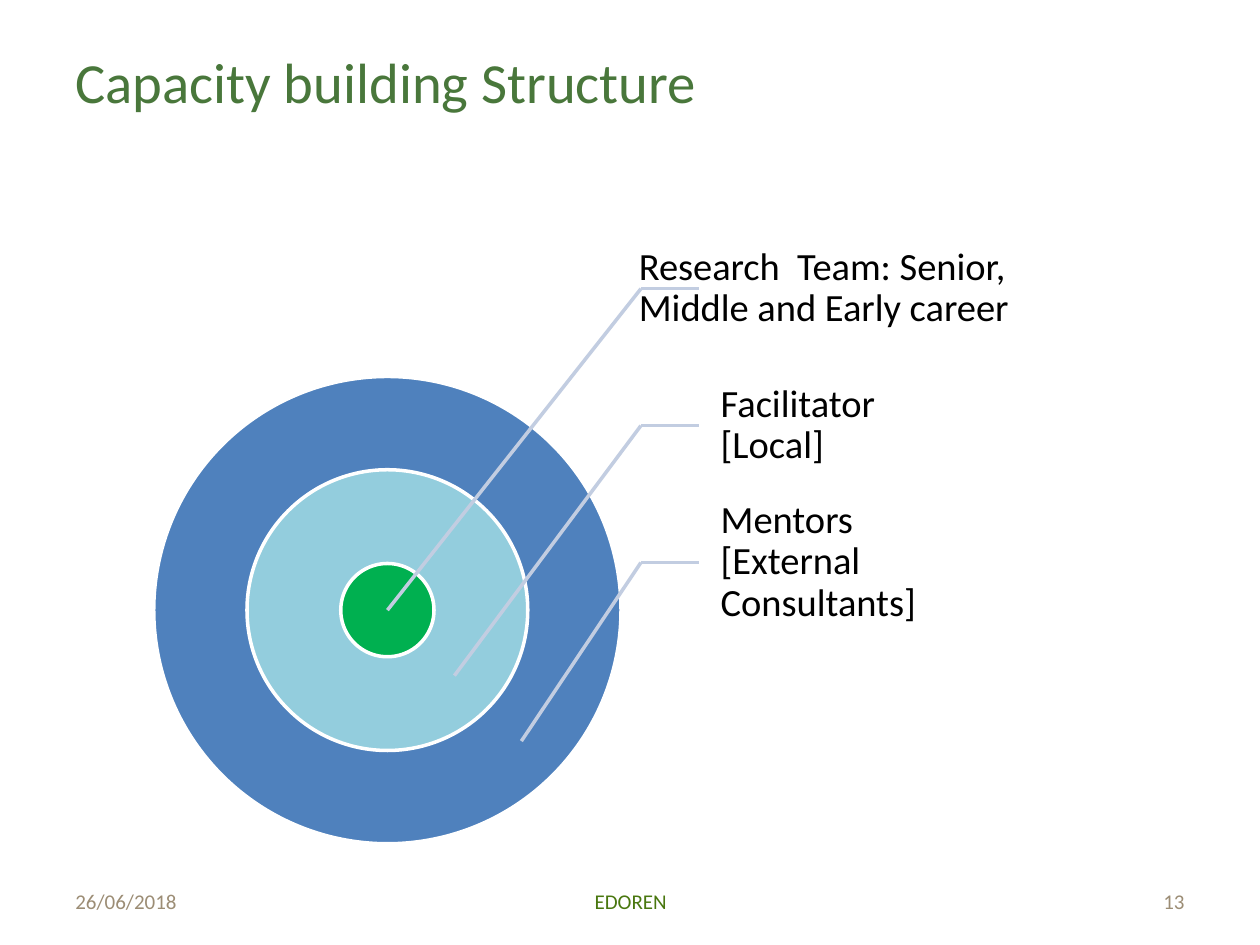
"""Build the capacity building slide: nested rings with three labelled leader lines."""
import pptx
import pptx.dml.color
import pptx.enum.shapes
import pptx.enum.text
import pptx.oxml.ns
import pptx.util
import lxml.etree
from dataclasses import dataclass

Cm = pptx.util.Cm
Pt = pptx.util.Pt
Align = pptx.enum.text.PP_ALIGN


@dataclass(frozen=True)
class Theme:
    font: str = "Calibri"
    title: str = "49773B"
    body: str = "000000"
    muted: str = "9C8D75"
    brand: str = "49770F"
    edge: str = "FFFFFF"
    lead: str = "C2CDE1"
    rings: tuple = ("4F81BD", "93CDDD", "00B050")
    head: float = 32.4
    label: float = 22
    foot: float = 12
    line: float = 2


def tint(code):
    return pptx.dml.color.RGBColor.from_string(code)


def write(frame, text, *, font, size, color, align=Align.LEFT, gap=None, pads=None):
    frame.word_wrap = True
    frame.vertical_anchor = pptx.enum.text.MSO_ANCHOR.MIDDLE
    if pads:
        left, other = pads
        frame.margin_left = Cm(left)
        frame.margin_top = frame.margin_right = frame.margin_bottom = Cm(other)
    para = frame.paragraphs[0]
    para.alignment = align
    if gap:
        para.line_spacing = gap
    run = para.add_run()
    run.text = text
    run.font.name = font
    run.font.size = Pt(size)
    run.font.color.rgb = tint(color)


class Deck:
    def __init__(self, theme):
        self.theme = theme
        self.file = pptx.Presentation()
        self.file.slide_width, self.file.slide_height = Cm(25.4), Cm(19.05)
        self.slide = self.file.slides.add_slide(self.file.slide_layouts[6])

    def text(self, box, text, **form):
        shape = self.slide.shapes.add_textbox(*map(Cm, box))
        write(shape.text_frame, text, font=self.theme.font, **form)

    def ring(self, mid, size, color):
        left, top = (c - size / 2 for c in mid)
        oval = pptx.enum.shapes.MSO_SHAPE.OVAL
        shape = self.slide.shapes.add_shape(oval, Cm(left), Cm(top), Cm(size), Cm(size))
        shape.shadow.inherit = False
        shape.fill.solid()
        shape.fill.fore_color.rgb = tint(color)
        shape.line.color.rgb = tint(self.theme.edge)
        shape.line.width = Pt(self.theme.line)

    def line(self, start, end):
        kind = pptx.enum.shapes.MSO_CONNECTOR.STRAIGHT
        line = self.slide.shapes.add_connector(kind, *map(Cm, (*start, *end)))
        line.line.color.rgb = tint(self.theme.lead)
        line.line.width = Pt(self.theme.line)
        lxml.etree.SubElement(line._element.spPr, pptx.oxml.ns.qn("a:effectLst"))

    def label(self, text, left, width, mid, high):
        self.text((left, mid - high / 2, width, high), text, size=self.theme.label,
                  color=self.theme.body, gap=0.9, pads=(0.43, 0.08))

    def foot(self, text, left, width, color, align):
        self.text((left, 17.65, width, 1.02), text, size=self.theme.foot,
                  color=color, align=align)


def main():
    theme = Theme()
    deck = Deck(theme)
    mid = (7.81, 12.3)
    for size, color in zip((9.42, 5.66, 1.88), theme.rings):
        deck.ring(mid, size, color)

    labels = (
        ("Research  Team: Senior, Middle and Early career", 12.45, 8.03),
        ("Facilitator [Local]", 14.1, 4.72),
        ("Mentors [External Consultants]", 14.1, 4.72),
    )
    step, bend, stop = 2.76, 12.92, 14.1
    for i, (text, left, width) in enumerate(labels):
        row = 5.82 + i * step
        deck.label(text, left, width, row, step)
        deck.line((bend, row), (stop, row))
        deck.line((bend, row), (mid[0] + i * 1.35, mid[1] + i * 1.32))

    deck.foot("26/06/2018", 1.27, 5.92, theme.muted, Align.LEFT)
    deck.foot("EDOREN", 8.69, 8.05, theme.brand, Align.CENTER)
    deck.foot("13", 18.21, 5.92, theme.muted, Align.RIGHT)
    deck.text((1.27, 0.76, 22.86, 1.75), "Capacity building Structure",
              size=theme.head, color=theme.title)
    deck.file.save("out.pptx")


if __name__ == "__main__":
    main()
